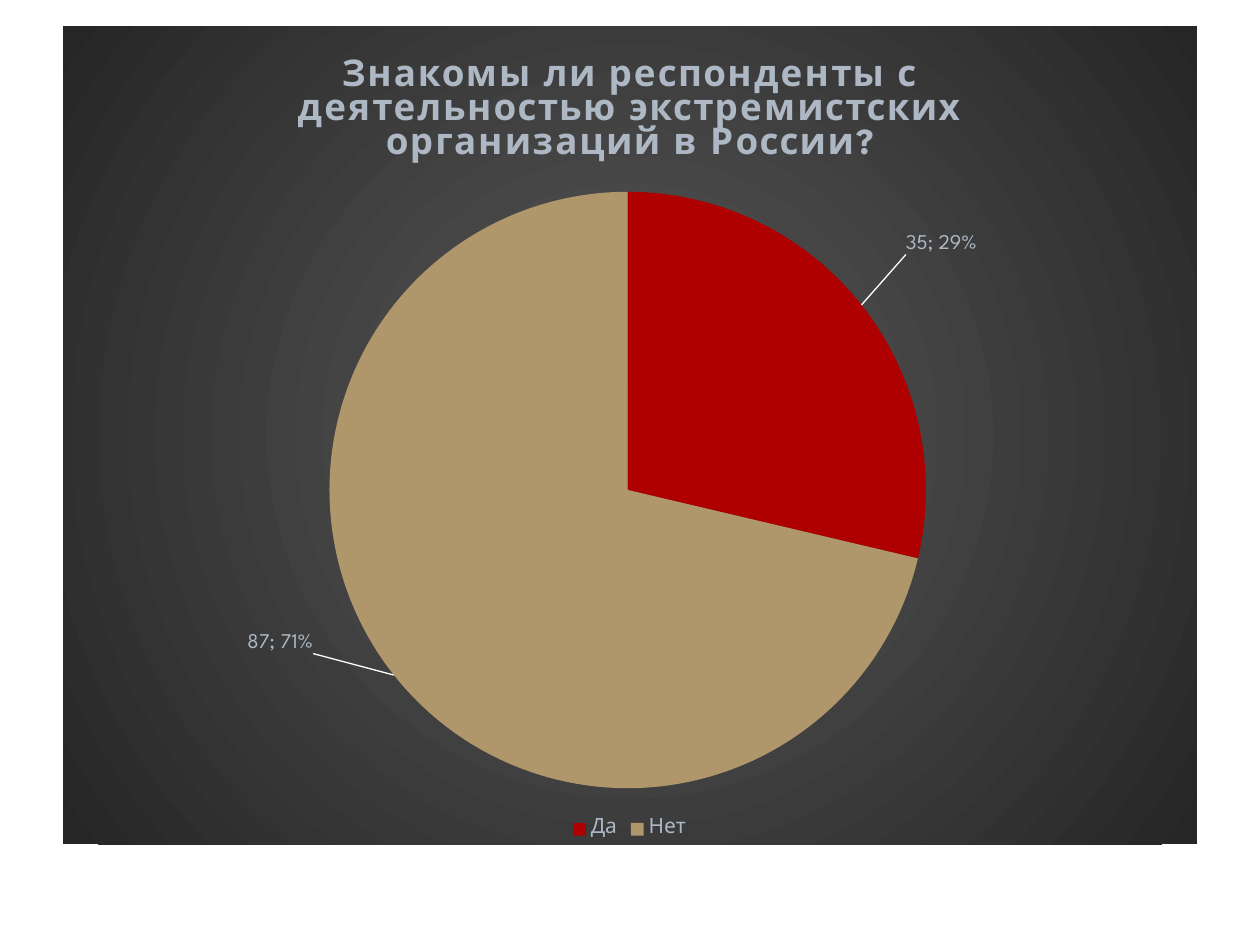
import pptx
import pptx.chart.data
import pptx.dml.color
import pptx.enum.chart
import pptx.oxml
import pptx.oxml.ns
import pptx.util
from pptx.util import Inches

FONT = "League Spartan"
COLORS = {
    "text": "ADB8C4",
    "yes": "AE0000",
    "no": "AF966B",
    "center": "595959",
    "edge": "262626",
    "leader": "FFFFFF",
}
ANSWERS = [
    ("Да", 35, "yes", (0.034, -0.056)),
    ("Нет", 87, "no", (-0.066, -0.056)),
]


def color(name):
    """Return the named colour."""
    return pptx.dml.color.RGBColor.from_string(COLORS[name])


def chart_xml(body):
    """Parse a chart element given with the c and a prefixes."""
    tag, rest = body[:-1].split(">", 1)
    namespaces = pptx.oxml.ns.nsdecls("c", "a")
    return pptx.oxml.parse_xml(f"{tag} {namespaces}>{rest}>")


def style_font(font, size, bold=False):
    """Apply the typeface, size and text colour."""
    font.name = FONT
    font.size = pptx.util.Pt(size)
    font.bold = bold
    font.color.rgb = color("text")


def add_text(text_frame, text, size=12, bold=False, spacing=0):
    """Write one formatted run of text."""
    run = text_frame.paragraphs[0].add_run()
    run.text = text
    style_font(run.font, size, bold)
    run.font._element.set("spc", str(spacing))


def layout_xml(x, y, width=None, height=None):
    """Build a manual layout as fractions of the chart."""
    parts = f'<c:x val="{x}"/><c:y val="{y}"/>'
    if width is not None:
        parts = (
            '<c:layoutTarget val="inner"/><c:xMode val="edge"/><c:yMode val="edge"/>'
            f'{parts}<c:w val="{width}"/><c:h val="{height}"/>'
        )
    return chart_xml(f"<c:layout><c:manualLayout>{parts}</c:manualLayout></c:layout>")


def fill_background(chart):
    """Give the chart area its radial gradient."""
    stops = "".join(
        f'<a:gs pos="{position}"><a:srgbClr val="{COLORS[name]}"/></a:gs>'
        for position, name in ((0, "center"), (100000, "edge"))
    )
    area = chart_xml(
        f"<c:spPr><a:gradFill><a:gsLst>{stops}</a:gsLst>"
        '<a:path path="circle"><a:fillToRect l="50000" t="50000" r="50000" b="50000"/></a:path>'
        "</a:gradFill><a:ln><a:noFill/></a:ln></c:spPr>"
    )
    chart._chartSpace.find(pptx.oxml.ns.qn("c:chart")).addnext(area)


def show_value_and_percent(labels, element):
    """Show value and percent in best-fit labels."""
    style_font(labels.font, 12)
    labels.position = pptx.enum.chart.XL_LABEL_POSITION.BEST_FIT
    for tag in ("c:showVal", "c:showPercent"):
        element.find(pptx.oxml.ns.qn(tag)).set("val", "1")
    bubble = element.find(pptx.oxml.ns.qn("c:showBubbleSize"))
    bubble.addnext(chart_xml("<c:separator>; </c:separator>"))


def style_slices(series):
    """Colour the slices and place their labels and leader lines."""
    labels = series.data_labels
    labels_element = labels._element
    show_value_and_percent(labels, labels_element)
    for index, (_, _, name, offset) in enumerate(ANSWERS):
        point = series.points[index]
        point.format.fill.solid()
        point.format.fill.fore_color.rgb = color(name)
        point.format.line.fill.background()
        label = point.data_label
        style_font(label.font, 12)
        element = labels_element.findall(pptx.oxml.ns.qn("c:dLbl"))[index]
        show_value_and_percent(label, element)
        element.find(pptx.oxml.ns.qn("c:idx")).addnext(layout_xml(*offset))
    leader = labels_element.find(pptx.oxml.ns.qn("c:showLeaderLines"))
    leader.set("val", "1")
    leader.addnext(chart_xml(
        '<c:leaderLines><c:spPr><a:ln w="9525"><a:solidFill>'
        f'<a:srgbClr val="{COLORS["leader"]}"/>'
        "</a:solidFill></a:ln></c:spPr></c:leaderLines>"
    ))


def add_survey_pie(slide, left, top, width, height):
    """Add the survey pie chart in the given box."""
    data = pptx.chart.data.CategoryChartData()
    data.categories = [answer[0] for answer in ANSWERS]
    data.add_series("Series 1", [answer[1] for answer in ANSWERS])
    chart = slide.shapes.add_chart(
        pptx.enum.chart.XL_CHART_TYPE.PIE, left, top, width, height, data
    ).chart
    style_font(chart.font, 10)
    fill_background(chart)
    chart.has_title = True
    add_text(
        chart.chart_title.text_frame,
        "Знакомы ли респонденты с деятельностью экстремистских организаций в России?",
        size=21, bold=True, spacing=100,
    )
    chart.chart_title.include_in_layout = False
    chart.has_legend = True
    chart.legend.position = pptx.enum.chart.XL_LEGEND_POSITION.BOTTOM
    chart.legend.include_in_layout = False
    style_font(chart.legend.font, 12)
    plot = chart.plots[0]
    plot.vary_by_categories = True
    style_slices(plot.series[0])
    plot_area = plot._element.getparent()
    for layout in plot_area.findall(pptx.oxml.ns.qn("c:layout")):
        plot_area.remove(layout)
    plot_area.insert(0, layout_xml(0.235, 0.202, 0.526, 0.73))


def main():
    """Build and save the presentation."""
    presentation = pptx.Presentation()
    presentation.slide_width = Inches(10)
    presentation.slide_height = Inches(7.5)
    slide = presentation.slides.add_slide(presentation.slide_layouts[6])
    add_survey_pie(slide, Inches(0.5), Inches(0.21), Inches(9), Inches(6.49))
    presentation.save("out.pptx")


if __name__ == "__main__":
    main()
